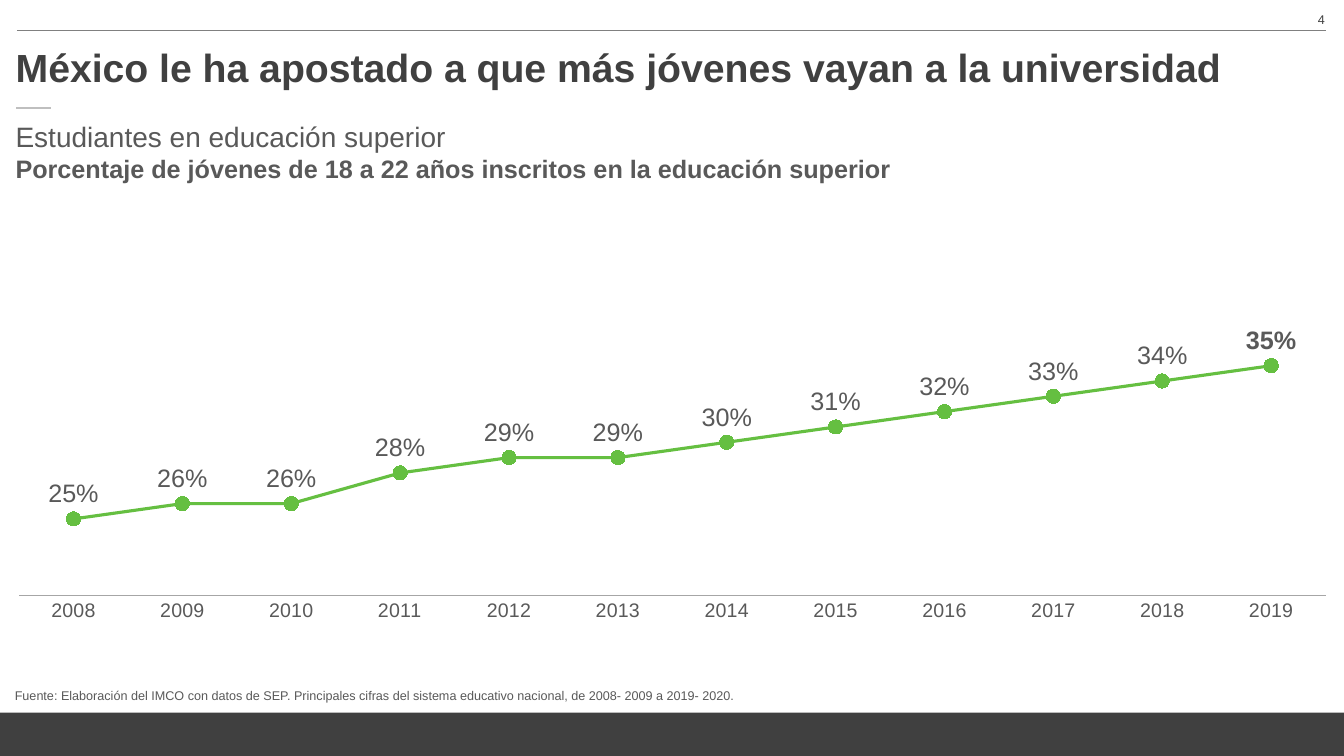
from lxml import etree
from pptx import Presentation
from pptx.chart.data import CategoryChartData as Data
from pptx.dml.color import RGBColor
from pptx.enum.chart import XL_CHART_TYPE as Kind, XL_LABEL_POSITION as Pos
from pptx.enum.chart import XL_MARKER_STYLE as Mark, XL_TICK_MARK as Tick
from pptx.enum.shapes import MSO_CONNECTOR as Conn, MSO_SHAPE as Shape
from pptx.enum.text import MSO_ANCHOR as Anchor, MSO_AUTO_SIZE as Fit, PP_ALIGN as Align
from pptx.oxml import parse_xml
from pptx.oxml.ns import nsdecls, qn
from pptx.util import Pt

DARK = RGBColor(0x40, 0x40, 0x40)
GRAY = RGBColor(0x59, 0x59, 0x59)
RULE = RGBColor(0x80, 0x80, 0x80)
AXIS = RGBColor(0xA6, 0xA6, 0xA6)
PALE = RGBColor(0xBF, 0xBF, 0xBF)
GREEN = RGBColor(0x65, 0xBF, 0x41)
FONT = "Arial"
RATES = [25, 26, 26, 28, 29, 29, 30, 31, 32, 33, 34, 35]
YEARS = range(2008, 2020)


def style(font, size, color, bold=False):
    font.name, font.size, font.bold = FONT, Pt(size), bold
    font.color.rgb = color


def write(frame, text, size=18, color=GRAY, bold=False, align=Align.LEFT,
          anchor=Anchor.TOP, more=False):
    """Put one paragraph in a frame, or add it after those already there."""
    frame.word_wrap, frame.auto_size = True, Fit.NONE
    frame.vertical_anchor = anchor
    para = frame.add_paragraph() if more else frame.paragraphs[0]
    para.alignment = align
    run = para.add_run()
    run.text = text
    style(run.font, size, color, bold)


class Page:
    def __init__(self, deck):
        self.slide = deck.slides.add_slide(deck.slide_layouts[5])
        self.shapes = self.slide.shapes

    def title(self, box, text, **form):
        head = self.shapes.title
        head.left, head.top, head.width, head.height = map(Pt, box)
        write(head.text_frame, text, **form)

    def text(self, box, text, **form):
        frame = self.shapes.add_textbox(*map(Pt, box)).text_frame
        write(frame, text, **form)
        return frame

    def band(self, box, color):
        band = self.shapes.add_shape(Shape.RECTANGLE, *map(Pt, box))
        band.shadow.inherit = False
        band.fill.solid()
        band.fill.fore_color.rgb = color
        band.line.fill.background()

    def line(self, left, right, top, color, width):
        line = self.shapes.add_connector(
            Conn.STRAIGHT, Pt(left), Pt(top), Pt(right), Pt(top))
        line.line.color.rgb, line.line.width = color, Pt(width)
        etree.SubElement(line._element.spPr, qn("a:effectLst"))

    def chart(self, box, years, rates):
        # Newest year first; the reversed axis puts it on the right
        data = Data(number_format="0%")
        data.categories = [str(year) for year in reversed(years)]
        data.add_series("Series 1", [rate / 100 for rate in reversed(rates)])
        chart = self.shapes.add_chart(
            Kind.LINE_MARKERS, *map(Pt, box), data).chart
        chart.has_legend = chart.has_title = False
        style(chart.font, 18, DARK)

        # Axes
        cat, val = chart.category_axis, chart.value_axis
        cat.reverse_order = True
        cat.major_tick_mark = Tick.NONE
        style(cat.tick_labels.font, 14, GRAY)
        cat.format.line.color.rgb, cat.format.line.width = AXIS, Pt(1.25)
        val.minimum_scale, val.maximum_scale, val.major_unit = 0.2, 0.5, 2
        val.has_major_gridlines = val.visible = False

        # Series
        plot = chart.plots[0]
        plot.vary_by_categories = False
        line = plot.series[0]
        line.smooth = False
        line.format.line.color.rgb, line.format.line.width = GREEN, Pt(2.25)
        mark = line.marker
        mark.style, mark.size = Mark.CIRCLE, 10
        mark.format.fill.solid()
        mark.format.fill.fore_color.rgb = GREEN
        mark.format.line.color.rgb = GREEN

        # Labels, with the last year in bold
        last = line.points[0].data_label
        style(last.font, 18, GRAY, bold=True)
        last.position = Pos.ABOVE
        tags = line.data_labels
        tags.show_value, tags.position = True, Pos.ABOVE
        tags.number_format, tags.number_format_is_linked = "0%", False
        style(tags.font, 18, GRAY)

        # Plot area fills the frame above the years
        area = chart._chartSpace.chart.plotArea
        for old in area.findall(qn("c:layout")):
            area.remove(old)
        area.insert(0, parse_xml(
            f'<c:layout {nsdecls("c")}><c:manualLayout>'
            '<c:layoutTarget val="inner"/>'
            '<c:xMode val="edge"/><c:yMode val="edge"/>'
            '<c:x val="0"/><c:y val="0"/><c:w val="1"/><c:h val="0.91"/>'
            '</c:manualLayout></c:layout>'))


def main():
    deck = Presentation()
    deck.slide_width, deck.slide_height = Pt(960), Pt(540)
    page = Page(deck)

    # Frame of the page
    page.band((0, 509, 960, 31), DARK)
    page.line(12, 947.5, 22, RULE, 0.75)
    page.text((737.5, 5, 216, 29), "4", size=9, color=DARK, align=Align.RIGHT)

    # Heading
    page.title((4, 26, 949, 43),
               "México le ha apostado a que más jóvenes vayan a la universidad",
               size=28, color=DARK, bold=True, anchor=Anchor.MIDDLE)
    page.line(11.5, 36.5, 77, PALE, 1.5)

    # Chart with its caption
    page.chart((13, 97, 934.5, 361), YEARS, RATES)
    frame = page.text((4, 82, 885, 78), "Estudiantes en educación superior",
                      size=20)
    write(frame, "Porcentaje de jóvenes de 18 a 22 años inscritos en la "
          "educación superior", bold=True, more=True)

    # Source
    page.text((3.5, 487, 935, 19),
              "Fuente: Elaboración del IMCO con datos de SEP. Principales "
              "cifras del sistema educativo nacional, de 2008- 2009 a "
              "2019- 2020.", size=9, anchor=Anchor.BOTTOM)
    deck.save("out.pptx")


if __name__ == "__main__":
    main()
